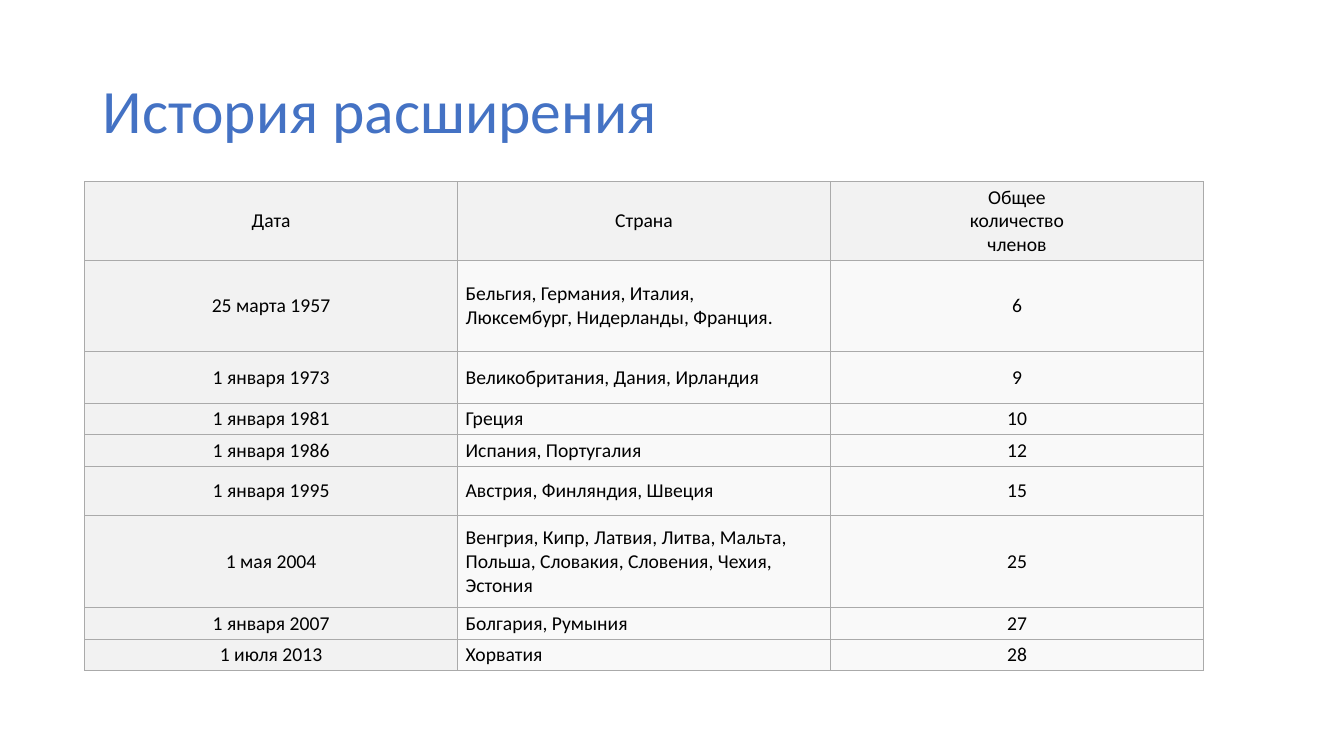
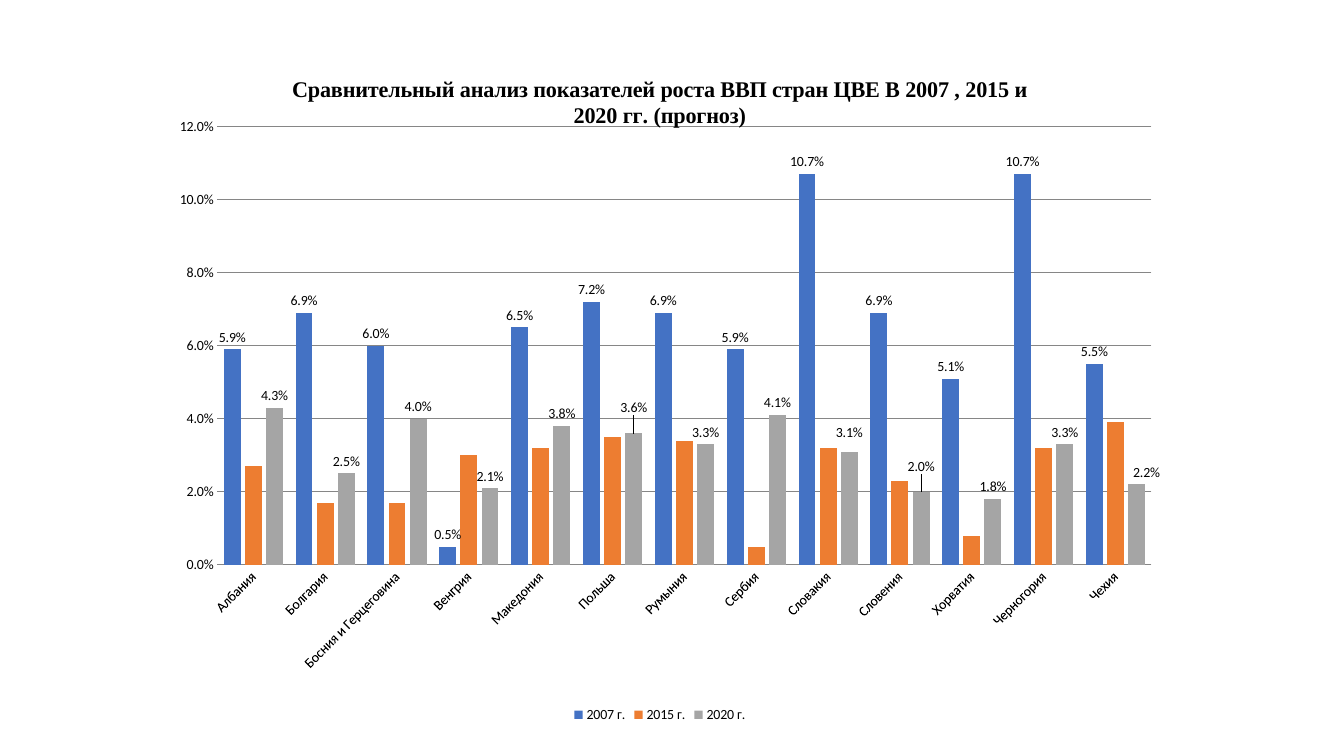
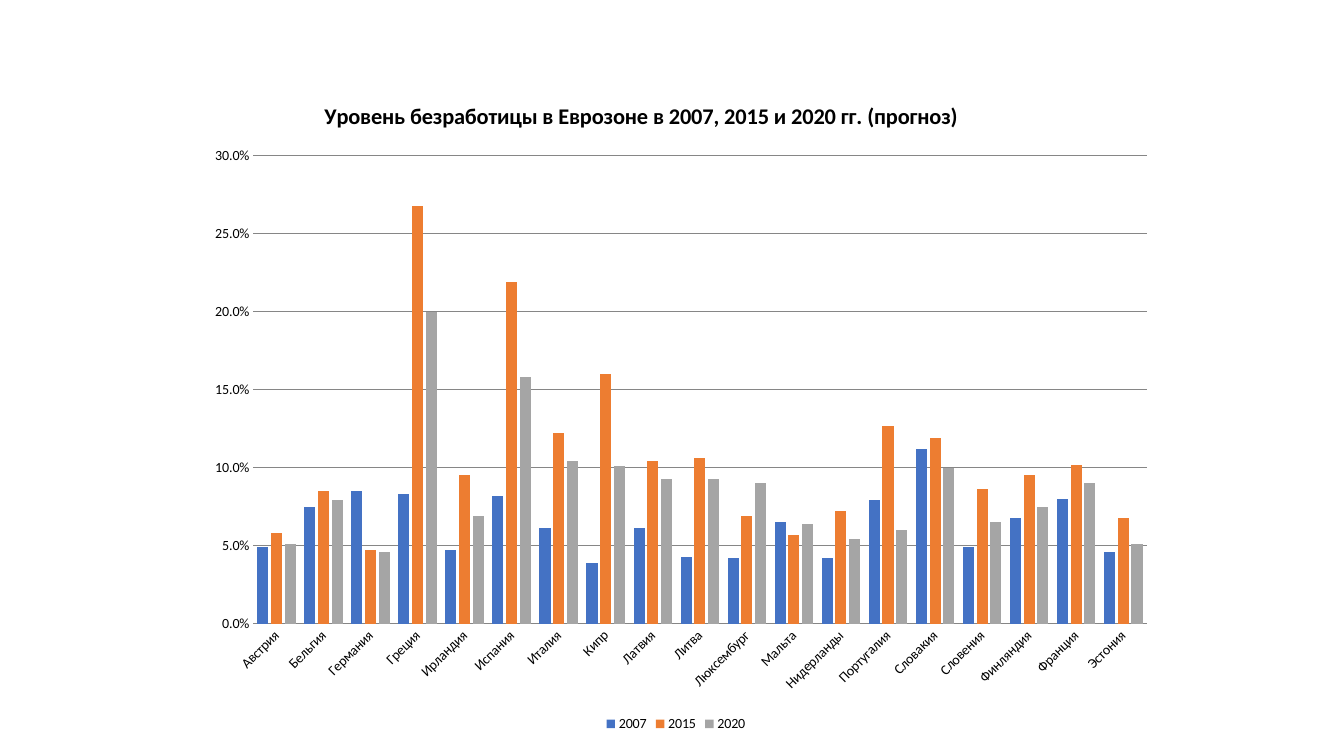
from dataclasses import dataclass, field

from lxml.etree import SubElement
from pptx import Presentation
from pptx.chart.chart import Chart
from pptx.chart.data import CategoryChartData
from pptx.dml.color import RGBColor
from pptx.enum.chart import XL_CHART_TYPE, XL_LABEL_POSITION, XL_LEGEND_POSITION, XL_TICK_MARK
from pptx.enum.text import MSO_ANCHOR, PP_ALIGN
from pptx.oxml import parse_xml
from pptx.oxml.ns import nsdecls, qn
from pptx.presentation import Presentation as Deck
from pptx.slide import Slide
from pptx.table import _Cell
from pptx.text.text import Font, TextFrame
from pptx.util import Inches, Length, Pt


@dataclass(frozen=True)
class Theme:
    body_font: str = "Calibri"
    serif_font: str = "Times New Roman"
    ink: str = "000000"
    accent: str = "4472C4"
    series_colors: tuple[str, ...] = ("4472C4", "ED7D31", "A5A5A5")
    header_fill: str = "F2F2F2"
    cell_fill: str = "F9F9F9"
    border: str = "AAAAAA"
    gridline: str = "868686"
    title_size: int = 44
    table_size: int = 14
    chart_title_size: int = 16
    chart_size: int = 10


THEME = Theme()
PAGE_WIDTH = Inches(13.33)
PAGE_HEIGHT = Inches(7.5)


@dataclass(frozen=True)
class Area:
    """Percentages of the slide's width and height."""

    left: float
    top: float
    width: float
    height: float

    def lengths(self) -> tuple[Length, Length, Length, Length]:
        return (
            Length(int(PAGE_WIDTH * self.left / 100)),
            Length(int(PAGE_HEIGHT * self.top / 100)),
            Length(int(PAGE_WIDTH * self.width / 100)),
            Length(int(PAGE_HEIGHT * self.height / 100)),
        )


@dataclass(frozen=True)
class Accession:
    date: str
    countries: tuple[str, ...]
    members: str
    height: float


@dataclass(frozen=True)
class Series:
    name: str
    percents: tuple[float, ...]
    labelled: bool = False
    label_shifts: dict[int, tuple[float, float]] = field(default_factory=dict)


@dataclass(frozen=True)
class ColumnChart:
    area: Area
    title: str
    title_font: str
    categories: tuple[str, ...]
    series: tuple[Series, ...]
    plot: tuple[float, float, float, float]
    maximum: float
    step: float
    title_corner: tuple[float, float] | None = None


ACCESSIONS = (
    Accession("Дата", ("Страна",), "Общее\nколичество\nчленов", 0.73),
    Accession("25 марта 1957", ("Бельгия, Германия, Италия,", "Люксембург, Нидерланды, Франция."), "6", 0.91),
    Accession("1 января 1973", ("Великобритания, Дания, Ирландия",), "9", 0.51),
    Accession("1 января 1981", ("Греция",), "10", 0.29),
    Accession("1 января 1986", ("Испания, Португалия",), "12", 0.29),
    Accession("1 января 1995", ("Австрия, Финляндия, Швеция",), "15", 0.49),
    Accession(
        "1 мая 2004",
        ("Венгрия, Кипр, Латвия, Литва, Мальта, Польша, Словакия, Словения, Чехия, Эстония",),
        "25",
        0.91,
    ),
    Accession("1 января 2007", ("Болгария, Румыния",), "27", 0.29),
    Accession("1 июля 2013", ("Хорватия",), "28", 0.29),
)

GROWTH = ColumnChart(
    area=Area(12.52, 6.93, 73.8, 89.2),
    title="Сравнительный анализ показателей роста ВВП стран ЦВЕ В 2007 , 2015 и 2020 гг. (прогноз)",
    title_font=THEME.serif_font,
    categories=(
        "Албания", "Болгария", "Босния и Герцеговина", "Венгрия", "Македония", "Польша", "Румыния",
        "Сербия", "Словакия", "Словения", "Хорватия", "Черногория", "Чехия",
    ),
    series=(
        Series("2007 г.", (5.9, 6.9, 6, 0.5, 6.5, 7.2, 6.9, 5.9, 10.7, 6.9, 5.1, 10.7, 5.5), labelled=True),
        Series("2015 г.", (2.7, 1.7, 1.7, 3, 3.2, 3.5, 3.4, 0.5, 3.2, 2.3, 0.8, 3.2, 3.9)),
        Series(
            "2020 г.",
            (4.3, 2.5, 4, 2.1, 3.8, 3.6, 3.3, 4.1, 3.1, 2, 1.8, 3.3, 2.2),
            labelled=True,
            label_shifts={5: (0, -0.02), 8: (0, -0.01), 9: (0, -0.02), 12: (0.01, 0)},
        ),
    ),
    plot=(0.05, 0.11, 0.95, 0.65),
    maximum=0.12,
    step=0.02,
)

UNEMPLOYMENT = ColumnChart(
    area=Area(14.55, 10.13, 71.49, 87.2),
    title="Уровень безработицы в Еврозоне в 2007, 2015 и 2020 гг. (прогноз)",
    title_font=THEME.body_font,
    categories=(
        "Австрия", "Бельгия", "Германия", "Греция", "Ирландия", "Испания", "Италия", "Кипр", "Латвия",
        "Литва", "Люксембург", "Мальта", "Нидерланды", "Португалия", "Словакия", "Словения",
        "Финляндия", "Франция", "Эстония",
    ),
    series=(
        Series("2007", (4.9, 7.5, 8.5, 8.3, 4.7, 8.2, 6.1, 3.9, 6.1, 4.3,
                        4.2, 6.5, 4.2, 7.9, 11.2, 4.9, 6.8, 8, 4.6)),
        Series("2015", (5.8, 8.5, 4.7, 26.8, 9.5, 21.9, 12.2, 16, 10.4, 10.6,
                        6.9, 5.7, 7.2, 12.7, 11.9, 8.6, 9.5, 10.2, 6.8)),
        Series("2020", (5.1, 7.9, 4.6, 20, 6.9, 15.8, 10.4, 10.1, 9.3, 9.3,
                        9, 6.4, 5.4, 6, 10, 6.5, 7.5, 9, 5.1)),
    ),
    plot=(0.06, 0.12, 0.93, 0.71),
    maximum=0.3,
    step=0.05,
    title_corner=(0.13, 0.03),
)


def style_font(font: Font, *, size: int, name: str = THEME.body_font,
               color: str = THEME.ink, bold: bool = False) -> None:
    font.size = Pt(size)
    font.name = name
    font.bold = bold
    font.color.rgb = RGBColor.from_string(color)


def write_text(frame: TextFrame, *paragraphs: str, size: int, color: str = THEME.ink,
               name: str = THEME.body_font, bold: bool = False,
               align: PP_ALIGN | None = None, line_spacing: float | None = None) -> None:
    for index, text in enumerate(paragraphs):
        para = frame.add_paragraph() if index else frame.paragraphs[0]
        para.alignment = align
        para.line_spacing = line_spacing
        for number, line in enumerate(text.split("\n")):
            if number:
                para.add_line_break()
            span = para.add_run()
            span.text = line
            style_font(span.font, size=size, name=name, color=color, bold=bold)


def add_title(page: Slide, text: str) -> None:
    box = page.shapes.add_textbox(*Area(6.9, 5.33, 86.25, 19.33).lengths())
    box.text_frame.word_wrap = True
    box.text_frame.vertical_anchor = MSO_ANCHOR.MIDDLE
    write_text(box.text_frame, text, size=THEME.title_size, color=THEME.accent, line_spacing=0.9)


def add_borders(cell: _Cell) -> None:
    properties = cell._tc.get_or_add_tcPr()
    for index, side in enumerate(("lnL", "lnR", "lnT", "lnB")):
        properties.insert(index, parse_xml(
            f'<a:{side} {nsdecls("a")} w="{Pt(0.75)}"><a:solidFill>'
            f'<a:srgbClr val="{THEME.border}"/></a:solidFill></a:{side}>'
        ))


def add_accession_table(page: Slide, accessions: tuple[Accession, ...]) -> None:
    table = page.shapes.add_table(len(accessions), 3, *Area(6.3, 24, 83.25, 62.8).lengths()).table
    table.first_row = False
    table.horz_banding = False
    for row_index, accession in enumerate(accessions):
        table.rows[row_index].height = Inches(accession.height)
        contents = ((accession.date,), accession.countries, (accession.members,))
        for column_index, paragraphs in enumerate(contents):
            cell = table.cell(row_index, column_index)
            is_header = row_index == 0 or column_index == 0
            cell.fill.solid()
            cell.fill.fore_color.rgb = RGBColor.from_string(THEME.header_fill if is_header else THEME.cell_fill)
            cell.vertical_anchor = MSO_ANCHOR.MIDDLE
            cell.margin_left = cell.margin_right = Inches(0.08)
            cell.margin_top = cell.margin_bottom = Inches(0.04)
            centred = is_header or column_index == 2
            write_text(cell.text_frame, *paragraphs, size=THEME.table_size,
                       align=PP_ALIGN.CENTER if centred else PP_ALIGN.LEFT)
            add_borders(cell)


def manual_layout(**values: str | float):
    layout = parse_xml(f'<c:layout {nsdecls("c")}/>')
    manual = SubElement(layout, qn("c:manualLayout"))
    for tag, value in values.items():
        SubElement(manual, qn(f"c:{tag}")).set("val", str(value))
    return layout


def place_after(element, tag: str, layout) -> None:
    for previous in element.findall(qn("c:layout")):
        element.remove(previous)
    element.find(qn(tag)).addnext(layout)


def style_axes(chart: Chart, content: ColumnChart) -> None:
    for axis in (chart.category_axis, chart.value_axis):
        axis.major_tick_mark = axis.minor_tick_mark = XL_TICK_MARK.NONE
        style_font(axis.tick_labels.font, size=THEME.chart_size)
    gray = RGBColor.from_string(THEME.gridline)
    chart.category_axis.format.line.color.rgb = gray
    values = chart.value_axis
    values.minimum_scale = 0
    values.maximum_scale = content.maximum
    values.major_unit = content.step
    values.format.line.fill.background()
    values.major_gridlines.format.line.color.rgb = gray
    values.tick_labels.number_format = "0.0%"
    values.tick_labels.number_format_is_linked = False
    category_element = chart._chartSpace.find(f".//{qn('c:catAx')}")
    category_element.find(f"{qn('c:txPr')}/{qn('a:bodyPr')}").set("rot", str(-45 * 60000))


def label_series(bars, content: Series) -> None:
    labels = bars.data_labels
    labels.show_value = True
    labels.number_format = "0.0%"
    labels.number_format_is_linked = False
    labels.position = XL_LABEL_POSITION.OUTSIDE_END
    style_font(labels.font, size=THEME.chart_size)
    for index, (across, down) in content.label_shifts.items():
        label = bars.points[index].data_label
        label.position = XL_LABEL_POSITION.OUTSIDE_END
        style_font(label.font, size=THEME.chart_size)
        element = bars._element.find(f".//{qn('c:dLbl')}[{qn('c:idx')}='{index}']")
        if element is None:
            element = next(item for item in bars._element.iter(qn("c:dLbl"))
                           if item.find(qn("c:idx")).get("val") == str(index))
        number_format = parse_xml(f'<c:numFmt {nsdecls("c")} formatCode="0.0%" sourceLinked="0"/>')
        element.find(qn("c:idx")).addnext(number_format)
        place_after(element, "c:idx", manual_layout(x=across, y=down))


def add_column_chart(page: Slide, content: ColumnChart) -> None:
    data = CategoryChartData(number_format="0.0%")
    data.categories = content.categories
    for series in content.series:
        data.add_series(series.name, [round(percent / 100, 3) for percent in series.percents])
    chart = page.shapes.add_chart(XL_CHART_TYPE.COLUMN_CLUSTERED, *content.area.lengths(), data).chart
    style_font(chart.font, size=THEME.chart_size)
    chart.has_title = True
    write_text(chart.chart_title.text_frame, content.title, size=THEME.chart_title_size,
               name=content.title_font, bold=True)
    chart.has_legend = True
    chart.legend.position = XL_LEGEND_POSITION.BOTTOM
    chart.legend.include_in_layout = False
    style_font(chart.legend.font, size=THEME.chart_size)
    style_axes(chart, content)

    plot = chart.plots[0]
    plot.gap_width = 75
    plot.overlap = -25
    plot.vary_by_categories = False
    for bars, series, color in zip(plot.series, content.series, THEME.series_colors):
        bars.format.fill.solid()
        bars.format.fill.fore_color.rgb = RGBColor.from_string(color)
        if series.labelled:
            label_series(bars, series)

    left, top, width, height = content.plot
    plot_area = chart._chartSpace.find(f".//{qn('c:plotArea')}")
    for previous in plot_area.findall(qn("c:layout")):
        plot_area.remove(previous)
    plot_area.insert(0, manual_layout(layoutTarget="inner", xMode="edge", yMode="edge",
                                      x=left, y=top, w=width, h=height))
    if content.title_corner:
        across, down = content.title_corner
        title = chart._chartSpace.find(f".//{qn('c:title')}")
        place_after(title, "c:tx", manual_layout(xMode="edge", yMode="edge", x=across, y=down))


def add_page(deck: Deck) -> Slide:
    return deck.slides.add_slide(deck.slide_layouts[6])


def main() -> None:
    deck = Presentation()
    deck.slide_width = PAGE_WIDTH
    deck.slide_height = PAGE_HEIGHT
    history = add_page(deck)
    add_title(history, "История расширения")
    add_accession_table(history, ACCESSIONS)
    for content in (GROWTH, UNEMPLOYMENT):
        add_column_chart(add_page(deck), content)
    deck.save("out.pptx")


if __name__ == "__main__":
    main()
